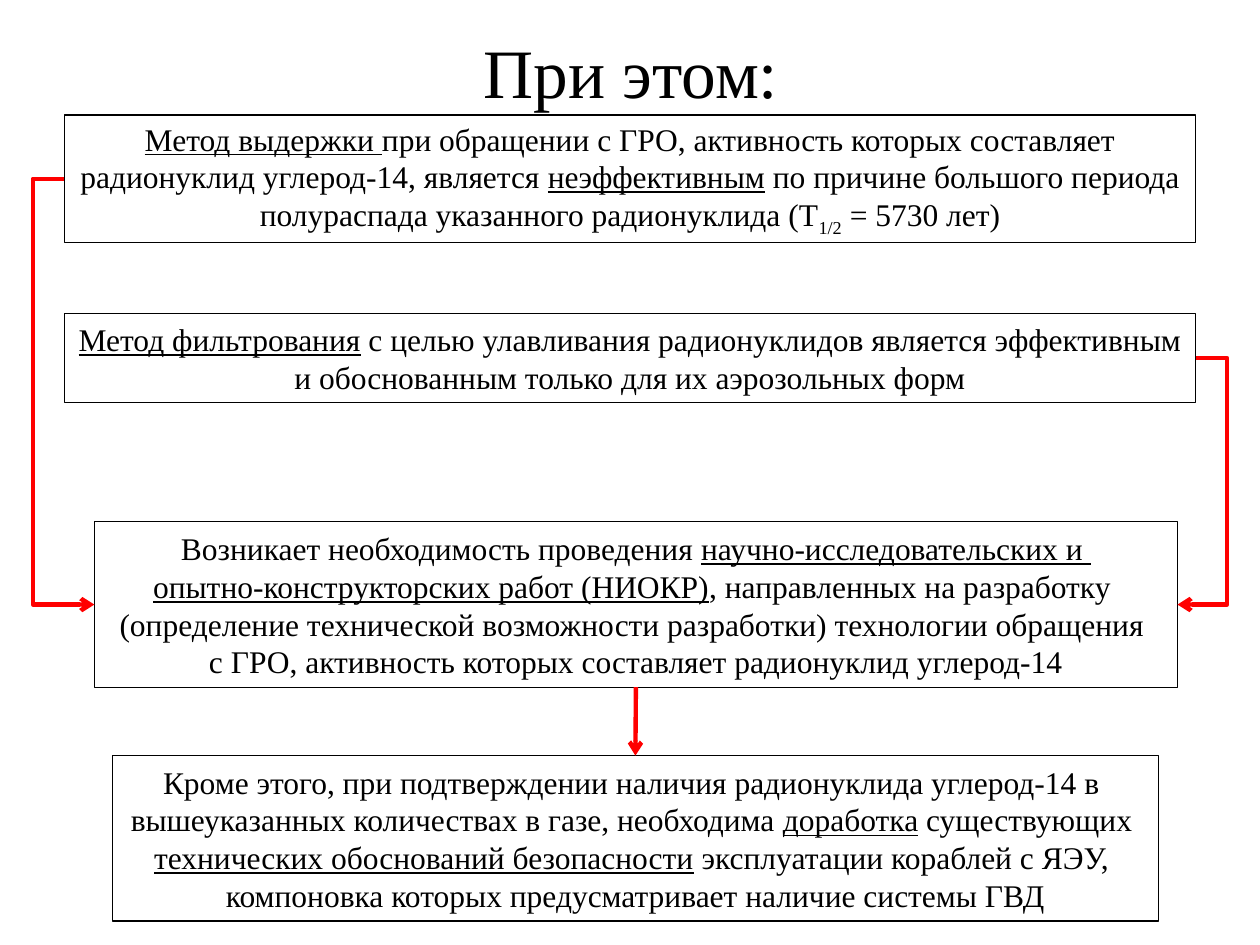
from pptx import Presentation
from pptx.dml.color import RGBColor
from pptx.enum.shapes import MSO_CONNECTOR, MSO_SHAPE
from pptx.enum.text import MSO_ANCHOR, PP_ALIGN
from pptx.oxml.ns import qn
from pptx.util import Pt
from lxml import etree

RECT = MSO_SHAPE.RECTANGLE
STRAIGHT, ELBOW = MSO_CONNECTOR.STRAIGHT, MSO_CONNECTOR.ELBOW
MIDDLE, CENTER = MSO_ANCHOR.MIDDLE, PP_ALIGN.CENTER

THEME = {
    "font": "Times New Roman",
    "title": Pt(39.6),
    "body": Pt(18),
    "ink": RGBColor(0, 0, 0),
    "arrow": RGBColor(255, 0, 0),
    "border_width": Pt(0.75),
    "arrow_width": Pt(2.5),
}
PLAIN, UNDER, SUB = {}, {"underline": True}, {"baseline": "-25000"}

TITLE = ((36.5, 15, 648, 51), [[("При этом:", PLAIN)]])
BOXES = {
    "holding": ((36.7, 65.8, 646.6, 72.7), True, [[
        ("Метод выдержки ", UNDER),
        ("при обращении с ГРО, активность которых составляет радионуклид углерод-14, является ", PLAIN),
        ("неэффективным", UNDER),
        (" по причине большого периода полураспада указанного радионуклида (T", PLAIN),
        ("1/2", SUB),
        (" = 5730 лет)", PLAIN),
    ]]),
    "filtering": ((36.7, 179.2, 646.6, 50.9), True, [[
        ("Метод фильтрования", UNDER),
        (" с целью улавливания радионуклидов является эффективным "
         "и обоснованным только для их аэрозольных форм", PLAIN),
    ]]),
    "research": ((53.9, 298.2, 619, 94.5), False, [
        [("Возникает необходимость проведения ", PLAIN), ("научно-исследовательских и ", UNDER)],
        [("опытно-конструкторских работ (НИОКР)", UNDER), (", направленных на разработку ", PLAIN)],
        [("(определение технической возможности разработки) технологии обращения ", PLAIN)],
        [("с ГРО, активность которых составляет радионуклид углерод-14", PLAIN)],
    ]),
    "safety": ((64.2, 431.8, 597.8, 94.5), False, [
        [("Кроме этого, при подтверждении наличия радионуклида углерод-14 в ", PLAIN)],
        [("вышеуказанных количествах в газе, необходима ", PLAIN), ("доработка", UNDER),
         (" существующих ", PLAIN)],
        [("технических обоснований безопасности", UNDER), (" эксплуатации кораблей с ЯЭУ, ", PLAIN)],
        [("компоновка которых предусматривает наличие системы ГВД", PLAIN)],
    ]),
}
ARROWS = [
    ("holding", "left", "research", "left"),
    ("filtering", "right", "research", "right"),
    ("research", "bottom", "safety", "top"),
]
DETOUR = {"left": -18, "right": 18}


def write(tf, paragraphs, size, wrap=True):
    tf.word_wrap = wrap
    tf.vertical_anchor = MIDDLE
    for i, runs in enumerate(paragraphs):
        p = tf.paragraphs[0] if i == 0 else tf.add_paragraph()
        p.alignment = CENTER
        for text, style in runs:
            r = p.add_run()
            r.text = text
            r.font.color.rgb = THEME["ink"]
            for name, value in {"name": THEME["font"], "size": size, **style}.items():
                if name == "baseline":
                    r.font._element.set(name, value)
                else:
                    setattr(r.font, name, value)


def add_box(s, frame, wrap, paragraphs):
    sp = s.shapes.add_shape(RECT, *map(Pt, frame))
    sp.shadow.inherit = False
    sp.fill.background()
    sp.line.color.rgb = THEME["ink"]
    sp.line.width = THEME["border_width"]
    write(sp.text_frame, paragraphs, THEME["body"], wrap)


def side_point(box, side):
    x, y, w, h = BOXES[box][0]
    return {
        "left": (x, y + h / 2),
        "right": (x + w, y + h / 2),
        "top": (x + w / 2, y),
        "bottom": (x + w / 2, y + h),
    }[side]


def add_arrow(s, source, out_side, target, in_side):
    start, end = side_point(source, out_side), side_point(target, in_side)
    kind = ELBOW if out_side in DETOUR else STRAIGHT
    c = s.shapes.add_connector(kind, *map(Pt, start + end))
    c.line.color.rgb = THEME["arrow"]
    c.line.width = THEME["arrow_width"]
    sp_pr = c._element.spPr
    if kind == ELBOW:
        bend = round(DETOUR[out_side] / (end[0] - start[0]) * 100000)
        guides = sp_pr.find(qn("a:prstGeom")).get_or_add_avLst()
        etree.SubElement(guides, qn("a:gd"), name="adj1", fmla=f"val {bend}")
    etree.SubElement(sp_pr.find(qn("a:ln")), qn("a:tailEnd"), type="arrow")
    etree.SubElement(sp_pr, qn("a:effectLst"))


def main():
    prs = Presentation()
    prs.slide_width, prs.slide_height = Pt(720), Pt(540)
    s = prs.slides.add_slide(prs.slide_layouts[6])
    frame, paragraphs = TITLE
    write(s.shapes.add_textbox(*map(Pt, frame)).text_frame, paragraphs, THEME["title"])
    for box in BOXES.values():
        add_box(s, *box)
    for arrow in ARROWS:
        add_arrow(s, *arrow)
    prs.save("out.pptx")


if __name__ == "__main__":
    main()
